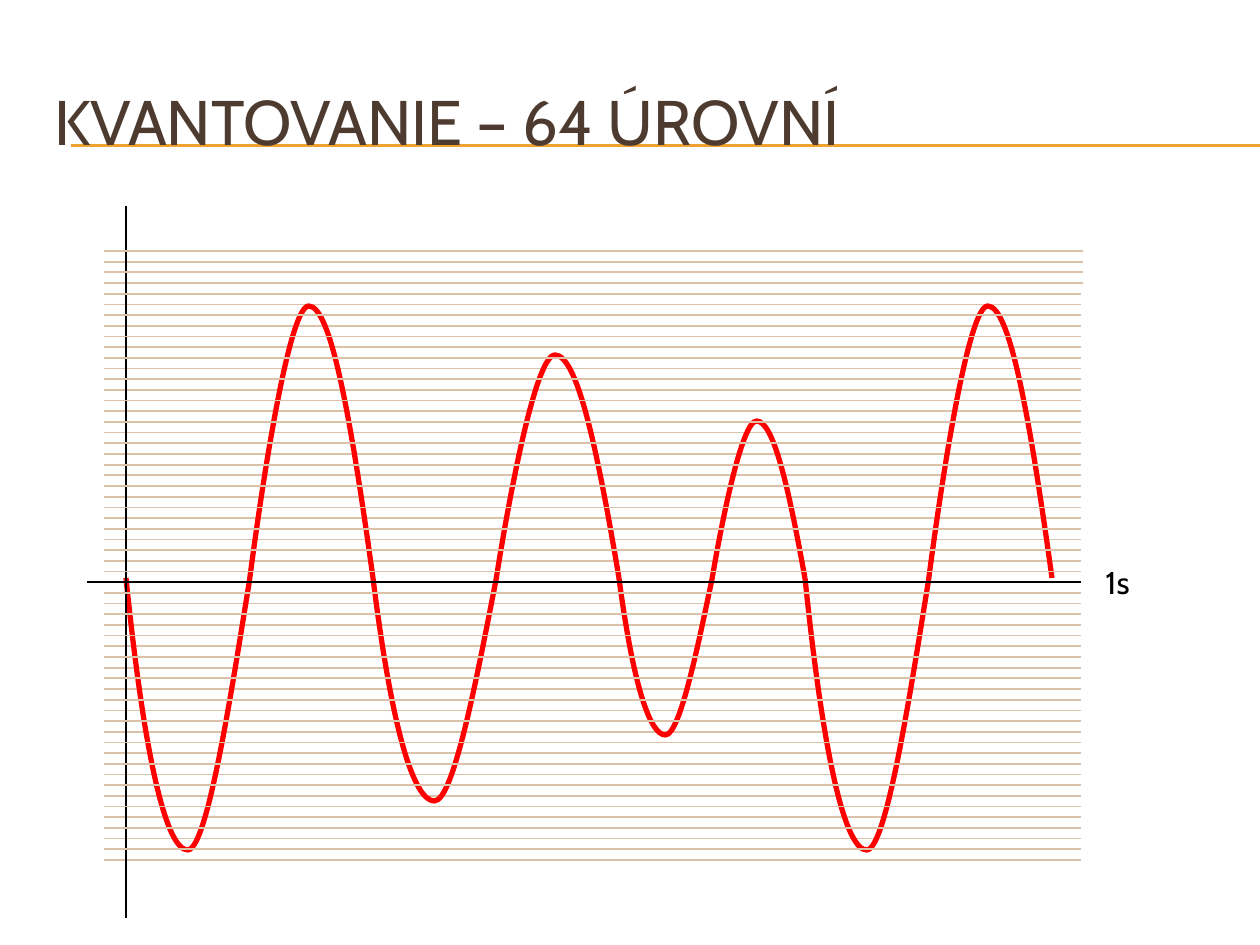
import pptx
import pptx.dml.color
import pptx.enum.shapes
import pptx.enum.text
import pptx.oxml
import pptx.util

EMU_PER_PX = 914400 / 126
DRAWING_NS = 'xmlns:a="http://schemas.openxmlformats.org/drawingml/2006/main"'
THEME = {
    "font": "Cabin", "title_size": 36, "label_size": 18,
    "title": "4E3B30", "axis": "000000", "rule": "F0A22E",
    "level": "DBC1A7", "wave": "FF0000",
    "rule_width": 0.75, "line_width": 1, "wave_width": 3,
}


def px(length):
    return pptx.util.Emu(round(length * EMU_PER_PX))


def add_line(x1, y1, x2, y2, color, width=THEME["line_width"]):
    line = slide.shapes.add_connector(
        pptx.enum.shapes.MSO_CONNECTOR.STRAIGHT, px(x1), px(y1), px(x2), px(y2))
    line.line.color.rgb = pptx.dml.color.RGBColor.from_string(THEME[color])
    line.line.width = pptx.util.Pt(width)
    line._element.spPr.append(pptx.oxml.parse_xml(f"<a:effectLst {DRAWING_NS}/>"))


deck = pptx.Presentation()
deck.slide_width, deck.slide_height = px(1260), px(945)
slide = deck.slides.add_slide(deck.slide_layouts[6])

# Double rule under the title
for y in (145, 146):
    add_line(71, y, 1260, y, "rule", THEME["rule_width"])

# Quantisation levels, evenly spaced; the zero level is the time axis.
# Odd levels lie behind the wave, even levels in front of it.
LEVEL_COUNT, ZERO_LEVEL = 58, 31
LEVEL_TOP, LEVEL_BOTTOM = 251, 860
level_gap = (LEVEL_BOTTOM - LEVEL_TOP) / (LEVEL_COUNT - 1)
levels = [(i, LEVEL_TOP + i * level_gap) for i in range(LEVEL_COUNT) if i != ZERO_LEVEL]
for i, y in levels:
    if i % 2:
        add_line(104, y, 1083 if i < 4 else 1081, y, "level")

# Title and time label
for text, box, size, color, wrap, anchor in (
    ("KVANTOVANIE – 64 ÚROVNÍ", (42, 62, 1197, 116), "title_size", "title", True,
     pptx.enum.text.MSO_ANCHOR.MIDDLE),
    ("1s", (1093, 557, 54, 50), "label_size", "axis", False, pptx.enum.text.MSO_ANCHOR.TOP),
):
    frame = slide.shapes.add_textbox(*map(px, box)).text_frame
    frame.word_wrap = wrap
    frame.vertical_anchor = anchor
    frame.text = text
    font = frame.paragraphs[0].runs[0].font
    font.name = THEME["font"]
    font.size = pptx.util.Pt(THEME[size])
    font.color.rgb = pptx.dml.color.RGBColor.from_string(THEME[color])

# Bezier points of one period, as fractions of its width and amplitude
UNIT_WAVE = [
    (0.08, 0.71), (0.17, 1), (0.25, 1), (0.33, 1), (0.43, 0.4), (0.5, 0.01),
    (0.55, -0.34), (0.66, -1), (0.74, -1), (0.83, -1), (0.91, -0.59), (1, 0),
]
WAVE_ZERO = 578
for start, end, amplitude in ((126, 373, 272), (373, 619, 223), (619, 805, 157), (805, 1052, 272)):
    builder = slide.shapes.build_freeform(px(start), px(WAVE_ZERO))
    builder.add_line_segments(
        [(px(start + u * (end - start)), px(WAVE_ZERO + v * amplitude)) for u, v in UNIT_WAVE],
        close=False)
    period = builder.convert_to_shape()
    period.shadow.inherit = False
    period.fill.background()
    period.line.color.rgb = pptx.dml.color.RGBColor.from_string(THEME["wave"])
    period.line.width = pptx.util.Pt(THEME["wave_width"])

    # Each three straight segments become one cubic curve
    segments = period._element.xpath(".//a:lnTo")
    for k in range(0, len(segments), 3):
        curve = pptx.oxml.parse_xml(f"<a:cubicBezTo {DRAWING_NS}/>")
        segments[k].addprevious(curve)
        for segment in segments[k:k + 3]:
            curve.append(segment[0])
            segment.getparent().remove(segment)

# Time and amplitude axes
add_line(87, 582, 1081, 582, "axis")
add_line(126, 206, 126, 918, "axis")

for i, y in levels:
    if i % 2 == 0:
        add_line(104, y, 1083 if i < 4 else 1081, y, "level")

deck.save("out.pptx")
